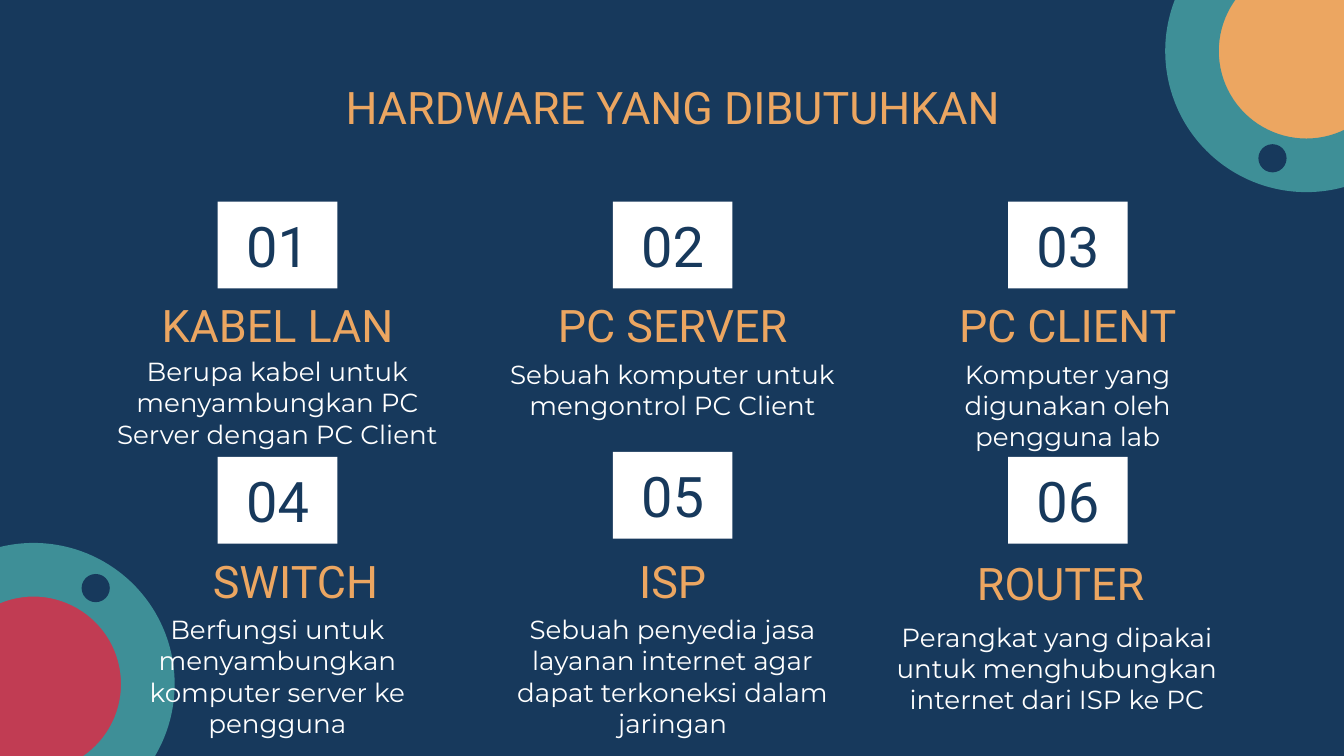
import pptx
import pptx.util
import pptx.dml.color
import pptx.enum.shapes
import pptx.enum.text

RGB = pptx.dml.color.RGBColor
KIND = pptx.enum.shapes.MSO_SHAPE
ALIGN = pptx.enum.text.PP_ALIGN
ANCHOR = pptx.enum.text.MSO_ANCHOR

NAVY = RGB(0x17, 0x39, 0x5C)
TEAL = RGB(0x3E, 0x8F, 0x97)
ROSE = RGB(0xC1, 0x3C, 0x53)
SAND = RGB(0xEC, 0xA6, 0x61)
WHITE = RGB(0xFF, 0xFF, 0xFF)

WIDE = 10
HIGH = WIDE * 9 / 16
LEFT, TOP = 0.73, 1.5
COL, ROW = 2.94, 1.9
CARD = 2.67
RING = 2.1

ITEMS = [
    ("KABEL LAN", "Berupa kabel untuk menyambungkan PC Server dengan PC Client"),
    ("PC SERVER", "Sebuah komputer untuk mengontrol PC Client"),
    ("PC CLIENT", "Komputer yang digunakan oleh pengguna lab"),
    ("SWITCH", "Berfungsi untuk menyambungkan komputer server ke pengguna"),
    ("ISP", "Sebuah penyedia jasa layanan internet agar dapat terkoneksi dalam jaringan"),
    ("ROUTER", "Perangkat yang dipakai untuk menghubungkan internet dari ISP ke PC"),
]
SHIFT = {
    (0, "body"): (0, -0.01),
    (3, "name"): (0.05, 0),
    (4, "badge"): (0, -0.02),
    (5, "name"): (-0.02, 0.01),
    (5, "body"): (-0.03, 0.03),
}


def part(box, x, y, w, h):
    """Return the part of a box given by shares of its width and height."""
    left, top, wide, high = box
    return left + x * wide, top + y * high, w * wide, h * high


def shape(slide, kind, box, fill):
    """Add a plain filled shape without line or shadow."""
    item = slide.shapes.add_shape(kind, *map(pptx.util.Inches, box))
    item.shadow.inherit = False
    item.fill.solid()
    item.fill.fore_color.rgb = fill
    item.line.fill.background()
    return item


def write(item, text, size=24, font="Roboto", color=SAND, anchor=ANCHOR.TOP):
    """Put centred text with its format into a shape."""
    frame = item.text_frame
    frame.word_wrap = True
    frame.vertical_anchor = anchor
    for side in ("left", "right", "top", "bottom"):
        setattr(frame, "margin_" + side, pptx.util.Inches(0.1))
    line = frame.paragraphs[0]
    line.alignment = ALIGN.CENTER
    run = line.add_run()
    run.text = text
    run.font.size = pptx.util.Pt(size)
    run.font.name = font
    run.font.color.rgb = color


def label(slide, box, text, **form):
    """Add a text box and write into it."""
    item = slide.shapes.add_textbox(*map(pptx.util.Inches, box))
    write(item, text, **form)


def disc(slide, box, core, x, y):
    """Draw a ring with a coloured core and a small dot at shares x, y."""
    shape(slide, KIND.OVAL, part(box, 0.18, 0.18, 0.64, 0.64), core)
    ring = shape(slide, KIND.DONUT, box, TEAL)
    ring.adjustments[0] = 0.19
    shape(slide, KIND.OVAL, part(box, x, y, 0.1, 0.1), NAVY)


def card(slide, box, index):
    """Draw one numbered item: badge, name and body."""
    def place(key, x, y, w, h):
        """Return the box of a part with its shift applied."""
        dx, dy = SHIFT.get((index, key), (0, 0))
        return part(box, x + dx, y + dy, w, h)

    name, body = ITEMS[index]
    label(slide, place("body", 0, 0.56, 1, 0.41), body,
          size=14, font="Montserrat", color=WHITE)
    label(slide, place("name", 0, 0.31, 1, 0.33), name, anchor=ANCHOR.BOTTOM)
    badge = shape(slide, KIND.RECTANGLE, place("badge", 1 / 3, 0, 1 / 3, 0.34), WHITE)
    write(badge, f"{index + 1:02}", size=30, color=NAVY, anchor=ANCHOR.MIDDLE)


def main():
    """Build and save the slide."""
    deck = pptx.Presentation()
    deck.slide_width = pptx.util.Inches(WIDE)
    deck.slide_height = pptx.util.Inches(HIGH)
    slide = deck.slides.add_slide(deck.slide_layouts[6])
    slide.background.fill.solid()
    slide.background.fill.fore_color.rgb = NAVY

    disc(slide, (-0.8, 4.04, RING, RING), ROSE, 0.67, 0.11)
    disc(slide, (8.67, -0.67, RING, RING), SAND, 0.33, 0.83)
    label(slide, (0.79, 0.49, 8.43, 0.63), "HARDWARE YANG DIBUTUHKAN")
    for index in range(len(ITEMS)):
        row, col = divmod(index, 3)
        card(slide, (LEFT + col * COL, TOP + row * ROW, CARD, ROW), index)
    deck.save("out.pptx")


if __name__ == "__main__":
    main()
